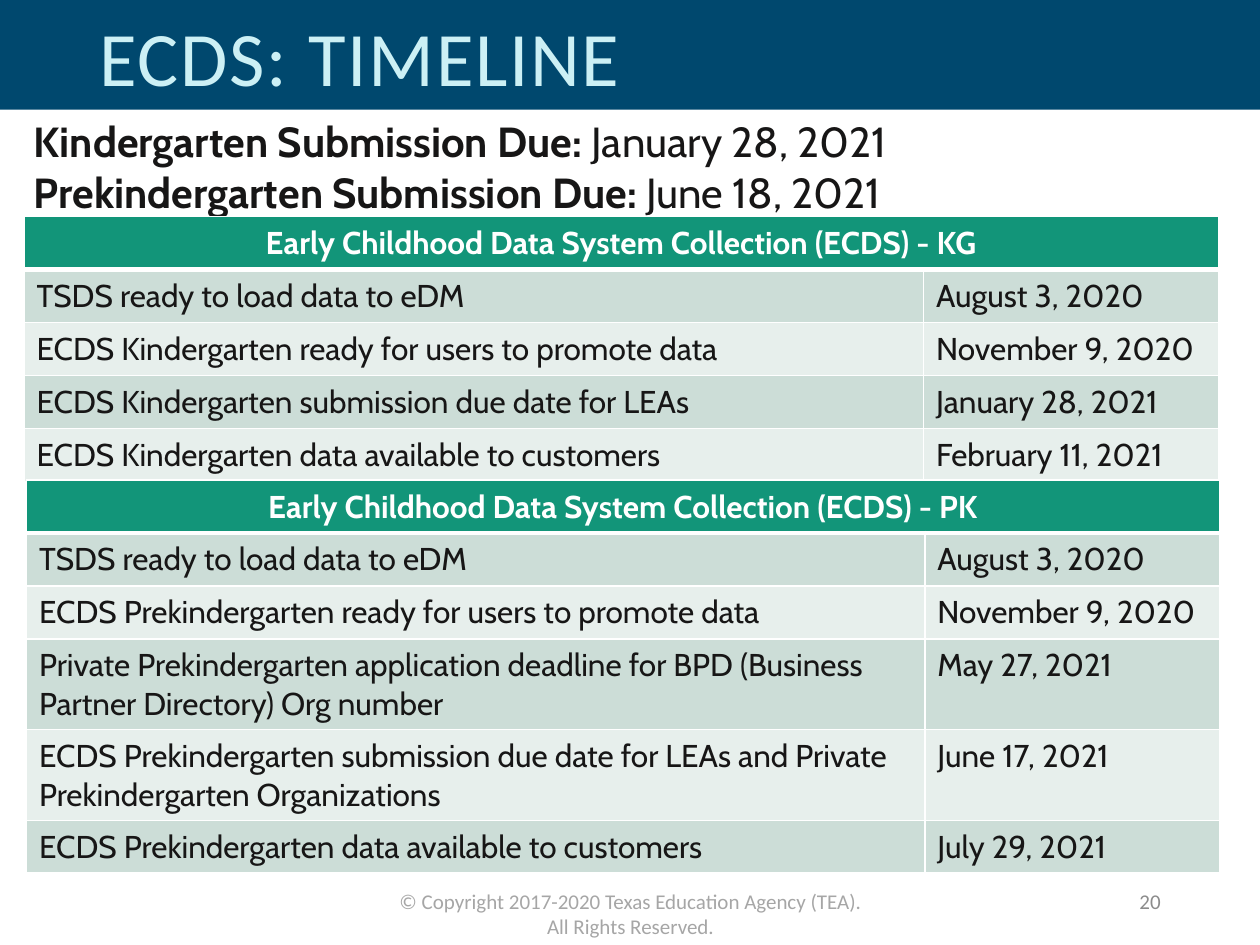
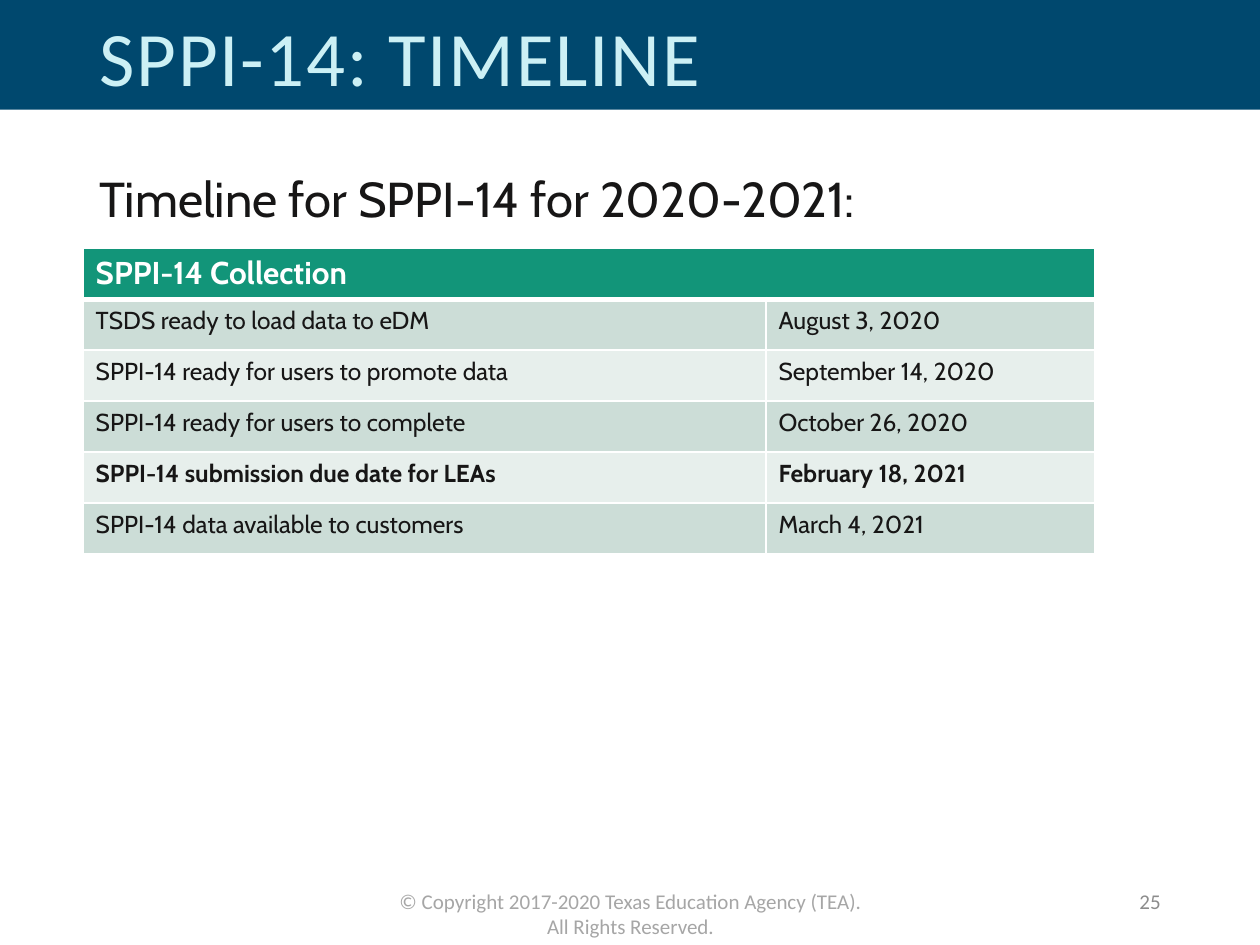
from lxml import etree
from pptx import Presentation
from pptx.dml.color import RGBColor
from pptx.enum.shapes import MSO_SHAPE
from pptx.enum.text import MSO_ANCHOR, MSO_AUTO_SIZE, PP_ALIGN
from pptx.oxml.ns import qn
from pptx.util import Inches, Pt

RECTANGLE = MSO_SHAPE.RECTANGLE
TOP, MIDDLE = MSO_ANCHOR.TOP, MSO_ANCHOR.MIDDLE
LEFT, CENTER, RIGHT = PP_ALIGN.LEFT, PP_ALIGN.CENTER, PP_ALIGN.RIGHT

NAVY = RGBColor(0x00, 0x48, 0x6E)
PALE_CYAN = RGBColor(0xCC, 0xF0, 0xF5)
INK = RGBColor(0x17, 0x16, 0x16)
WHITE = RGBColor(0xFF, 0xFF, 0xFF)
GREEN = RGBColor(0x12, 0x95, 0x79)
ROW_FILLS = [RGBColor(0xE7, 0xEF, 0xEC), RGBColor(0xCC, 0xDD, 0xD7)]
FOOTER_GRAY = RGBColor(0xA6, 0xA6, 0xA6)
NUMBER_GRAY = RGBColor(0x8C, 0x8C, 0x8C)

HEADING_FONT, BODY_FONT = "Calibri", "Cabin"
COPYRIGHT = "© Copyright 2017-2020 Texas Education Agency (TEA). All Rights Reserved."

SLIDES = [
    {
        "title": "ECDS: TIMELINE",
        "number": "20",
        "intro": [
            [("Kindergarten Submission Due: ", True), ("January 28, 2021", False)],
            [("Prekindergarten Submission Due: ", True), ("June 18, 2021", False)],
        ],
        "intro_box": (0.17, 0.87, 9.75, 0.91),
        "intro_format": {"size": 24},
        "tables": [
            {
                "heading": "Early Childhood Data System Collection (ECDS) - KG",
                "position": (0.19, 1.72),
                "columns": [7.14, 2.34],
                "heights": [0.42] * 5,
                "rows": [
                    ("TSDS ready to load data to eDM", "August 3, 2020"),
                    ("ECDS Kindergarten ready for users to promote data", "November 9, 2020"),
                    ("ECDS Kindergarten submission due date for LEAs", "January 28, 2021"),
                    ("ECDS Kindergarten data available to customers", "February 11, 2021"),
                ],
            },
            {
                "heading": "Early Childhood Data System Collection (ECDS) - PK",
                "position": (0.21, 3.81),
                "columns": [7.13, 2.34],
                "heights": [0.42, 0.42, 0.42, 0.72, 0.72, 0.42],
                "rows": [
                    ("TSDS ready to load data to eDM", "August 3, 2020"),
                    ("ECDS Prekindergarten ready for users to promote data", "November 9, 2020"),
                    ("Private Prekindergarten application deadline for BPD "
                     "(Business Partner Directory) Org number", "May 27, 2021"),
                    ("ECDS Prekindergarten submission due date for LEAs and "
                     "Private Prekindergarten Organizations", "June 17, 2021"),
                    ("ECDS Prekindergarten data available to customers", "July 29, 2021"),
                ],
            },
        ],
        "heading_format": {"align": CENTER, "anchor": MIDDLE},
        "row_size": 18,
        "cell_margin": 0.06,
        "bold_row": None,
    },
    {
        "title": "SPPI-14: TIMELINE",
        "number": "25",
        "intro": [[("Timeline for SPPI-14 for 2020-2021:", False)]],
        "intro_box": (0.69, 1.34, 8.62, 0.6),
        "intro_format": {"size": 28, "line_spacing": 0.9},
        "tables": [
            {
                "heading": "SPPI-14 Collection",
                "position": (0.66, 1.97),
                "columns": [5.42, 2.61],
                "heights": [0.405] * 6,
                "rows": [
                    ("TSDS ready to load data to eDM", "August 3, 2020"),
                    ("SPPI-14 ready for users to promote data", "September 14, 2020"),
                    ("SPPI-14 ready for users to complete", "October 26, 2020"),
                    ("SPPI-14 submission due date for LEAs", "February 18, 2021"),
                    ("SPPI-14 data available to customers", "March 4, 2021"),
                ],
            },
        ],
        "heading_format": {},
        "row_size": 14,
        "cell_margin": 0.05,
        "bold_row": 4,
    },
]


def write_text(target, text, size=18, font=BODY_FONT, color=INK, bold=False,
               align=LEFT, anchor=TOP, line_spacing=None, tracking=None):
    """Fill a shape or cell; text is a string or paragraphs of (text, bold) runs."""
    frame = target.text_frame
    frame.word_wrap = True
    target.vertical_anchor = frame.vertical_anchor = anchor
    paragraphs = [[(text, bold)]] if isinstance(text, str) else text
    for index, runs in enumerate(paragraphs):
        paragraph = frame.add_paragraph() if index else frame.paragraphs[0]
        paragraph.alignment = align
        if line_spacing:
            paragraph.line_spacing = line_spacing
        for run_text, run_bold in runs:
            run = paragraph.add_run()
            run.text = run_text
            run.font.size = Pt(size)
            run.font.name = font
            run.font.bold = run_bold
            run.font.color.rgb = color
            if tracking:
                run.font._element.set("spc", str(tracking * 100))


def style_cell(cell, fill, margin, bottom_width):
    """Set the cell's white borders, its fill and its vertical margins."""
    properties = cell._tc.get_or_add_tcPr()
    for side, width in (("L", 1), ("R", 1), ("T", 1), ("B", bottom_width)):
        line = etree.SubElement(properties, qn("a:ln" + side), w=str(Pt(width)))
        solid = etree.SubElement(line, qn("a:solidFill"))
        etree.SubElement(solid, qn("a:srgbClr"), val=str(WHITE))
    cell.fill.solid()
    cell.fill.fore_color.rgb = fill
    cell.margin_top = cell.margin_bottom = Inches(margin)


presentation = Presentation()
presentation.slide_width = Inches(10)
presentation.slide_height = Inches(7.5)
title_only = presentation.slide_layouts[5]

for content in SLIDES:
    slide = presentation.slides.add_slide(title_only)
    shapes = slide.shapes

    band = shapes.add_shape(RECTANGLE, 0, 0, presentation.slide_width, Inches(0.87))
    band.shadow.inherit = False
    band.fill.solid()
    band.fill.fore_color.rgb = NAVY
    band.line.fill.background()

    title = shapes.title
    shapes.element.append(title.element)  # the title lies over the band
    title.left, title.top, title.width, title.height = map(Inches, (0.69, 0.05, 8, 0.87))
    title.text_frame.auto_size = MSO_AUTO_SIZE.NONE
    write_text(title, content["title"], size=44, font=HEADING_FONT, color=PALE_CYAN,
               anchor=MIDDLE, line_spacing=0.9, tracking=1)

    footer = shapes.add_textbox(*map(Inches, (3.04, 7, 3.93, 0.3)))
    write_text(footer, COPYRIGHT, size=12, font=HEADING_FONT, color=FOOTER_GRAY, align=CENTER)

    number = shapes.add_textbox(*map(Inches, (7.06, 6.95, 2.25, 0.4)))
    write_text(number, content["number"], size=12, font=HEADING_FONT, color=NUMBER_GRAY,
               align=RIGHT, anchor=MIDDLE)

    intro = shapes.add_textbox(*map(Inches, content["intro_box"]))
    write_text(intro, content["intro"], **content["intro_format"])

    for timeline in content["tables"]:
        columns, heights = timeline["columns"], timeline["heights"]
        left, top = timeline["position"]
        table = shapes.add_table(len(heights), len(columns), Inches(left), Inches(top),
                                 Inches(sum(columns)), Inches(sum(heights))).table
        for column, width in zip(table.columns, columns):
            column.width = Inches(width)
        for row, height in zip(table.rows, heights):
            row.height = Inches(height)

        table.cell(0, 0).merge(table.cell(0, 1))
        for cell in table.rows[0].cells:
            style_cell(cell, GREEN, content["cell_margin"], 3)
        write_text(table.cell(0, 0), timeline["heading"], color=WHITE, bold=True,
                   **content["heading_format"])

        for row_index, texts in enumerate(timeline["rows"], start=1):
            for column_index, text in enumerate(texts):
                cell = table.cell(row_index, column_index)
                style_cell(cell, ROW_FILLS[row_index % 2], content["cell_margin"], 1)
                if row_index == 1:
                    cell._tc.tcPr.find(qn("a:lnT")).set("w", str(Pt(3)))
                write_text(cell, text, size=content["row_size"],
                           bold=row_index == content["bold_row"])

presentation.save("out.pptx")
